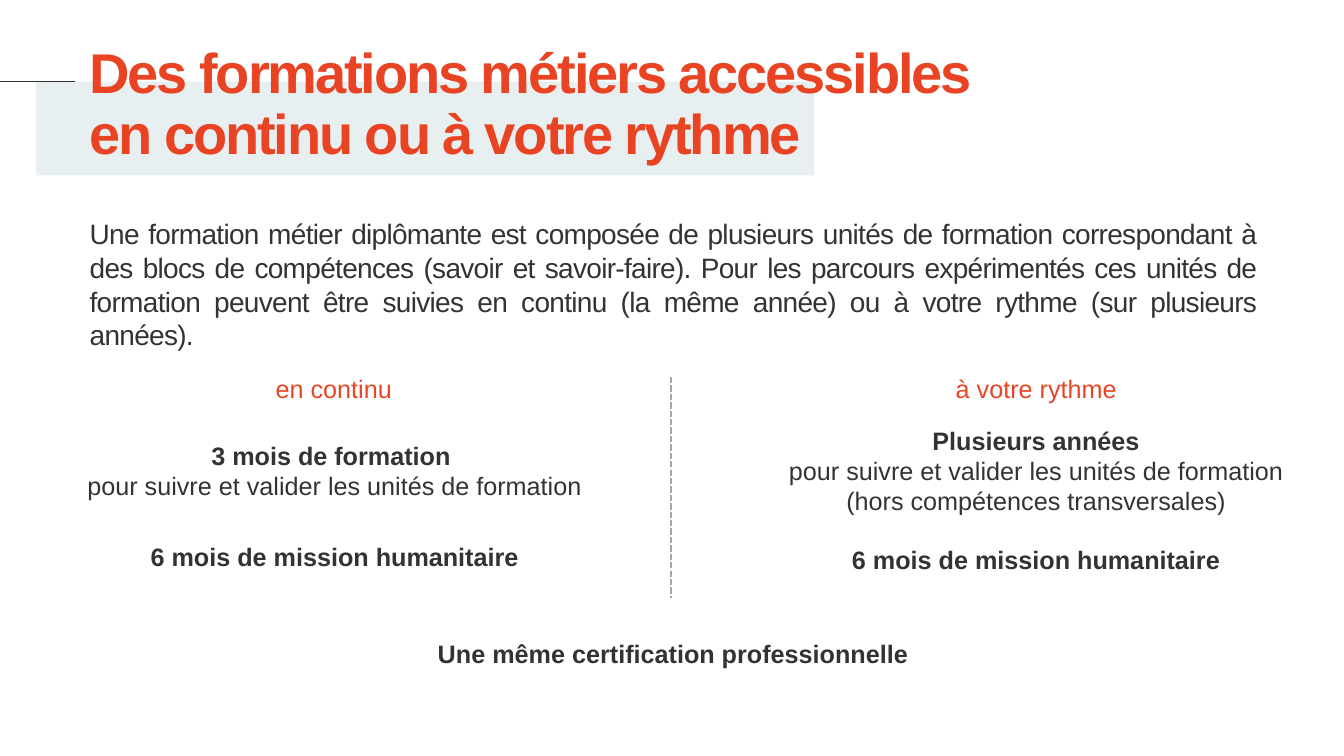
from lxml import etree
from pptx import Presentation
from pptx import util as u
from pptx.dml.color import RGBColor
from pptx.enum import dml, shapes, text
from pptx.oxml.ns import qn

COLORS = {"white": "FFFFFF", "band": "E8EFF1", "ink": "333331",
          "title": "E84424", "heading": "E84525", "divider": "A5A5A5"}
FONT = "Arial"
CENTER = text.PP_ALIGN.CENTER
BREAK = "\n"

# Places are left, top, width, height in cm; runs are (words, bold).
BAND = (0.91, 2.06, 19.61, 2.36)
TITLE = ((2.01, 1.02, 26.52, 3.68),
         [("Des formations métiers accessibles ", True), (BREAK, True),
          ("en continu ou à votre rythme", True)])
INTRO = ((2.01, 5.61, 29.9, 3.1),
         [("Une formation métier diplômante est composée de plusieurs unités de "
           "formation correspondant à des blocs de compétences (savoir et "
           "savoir-faire). Pour les parcours expérimentés ces unités de formation "
           "peuvent être suivies en continu (la même année) ou à votre rythme "
           "(sur plusieurs années).", False)])
HEADINGS = [((6.63, 9.37, 3.56, 1.09), "en continu"),
            ((23.65, 9.37, 4.93, 1.3), "à votre rythme")]
STEPS = [
    ((1.93, 10.72, 13, 2.26),
     [("3 mois de formation ", True), (BREAK, True),
      ("pour suivre et valider les unités de formation", False)]),
    ((19.33, 10.72, 13.56, 2.26),
     [("Plusieurs années", True), (BREAK, True),
      ("pour suivre et valider les unités de formation "
       "(hors compétences transversales)", False)]),
    ((1.6, 13.36, 13.67, 1.3), [("6 mois de mission humanitaire", True)]),
    ((21.18, 12.98, 9.86, 2.26), [("6 mois de mission humanitaire ", True)]),
    ((10.46, 15.34, 13, 2.26), [("Une même certification professionnelle", True)]),
]
# Start x, start y, end x, end y in cm.
TITLE_RULE = (-0.03, 2.06, 1.88, 2.06)
DIVIDER = (16.92, 9.5, 16.92, 15.06)


def color(name):
    return RGBColor.from_string(COLORS[name])


def cm(values):
    return [u.Cm(value) for value in values]


def add_block(page, place, fill):
    block = page.shapes.add_shape(shapes.MSO_SHAPE.RECTANGLE, *cm(place))
    block.shadow.inherit = False
    block.fill.solid()
    block.fill.fore_color.rgb = color(fill)
    block.line.fill.background()
    block.text_frame.vertical_anchor = text.MSO_ANCHOR.MIDDLE
    return block


def write(box, runs, size=18, ink="ink", align=CENTER, leading=None, tracking=None):
    """Fill the box with one paragraph; tracking is in hundredths of a point."""
    box.text_frame.word_wrap = True
    para = box.text_frame.paragraphs[0]
    para.alignment = align
    para.line_spacing = leading
    for words, bold in runs:
        if words == BREAK:
            para.add_line_break()
            continue
        span = para.add_run()
        span.text = words
        span.font.name = FONT
        span.font.size = u.Pt(size)
        span.font.bold = bold
        span.font.color.rgb = color(ink)
        if tracking:
            span.font._element.set("spc", str(tracking))


def add_rule(page, ends, ink, width, dash=None):
    rule = page.shapes.add_connector(shapes.MSO_CONNECTOR.STRAIGHT, *cm(ends))
    rule.line.color.rgb = color(ink)
    rule.line.width = u.Pt(width)
    if dash:
        rule.line.dash_style = dash
    etree.SubElement(rule._element.spPr, qn("a:effectLst"))


def main():
    deck = Presentation()
    deck.slide_width, deck.slide_height = u.Cm(33.87), u.Cm(19.05)
    page = deck.slides.add_slide(deck.slide_layouts[6])

    add_block(page, BAND, "band")
    add_rule(page, TITLE_RULE, "ink", 0.5)
    place, runs = TITLE
    write(page.shapes.add_textbox(*cm(place)), runs, 40, "title",
          text.PP_ALIGN.LEFT, 0.9, -150)

    place, runs = INTRO
    write(add_block(page, place, "white"), runs, 20,
          align=text.PP_ALIGN.JUSTIFY, tracking=-50)

    for place, runs in STEPS:
        write(add_block(page, place, "white"), runs)
    for place, words in HEADINGS:
        write(page.shapes.add_textbox(*cm(place)), [(words, False)],
              ink="heading", leading=0.9)
    add_rule(page, DIVIDER, "divider", 1.5, dml.MSO_LINE.SQUARE_DOT)

    deck.save("out.pptx")


if __name__ == "__main__":
    main()
